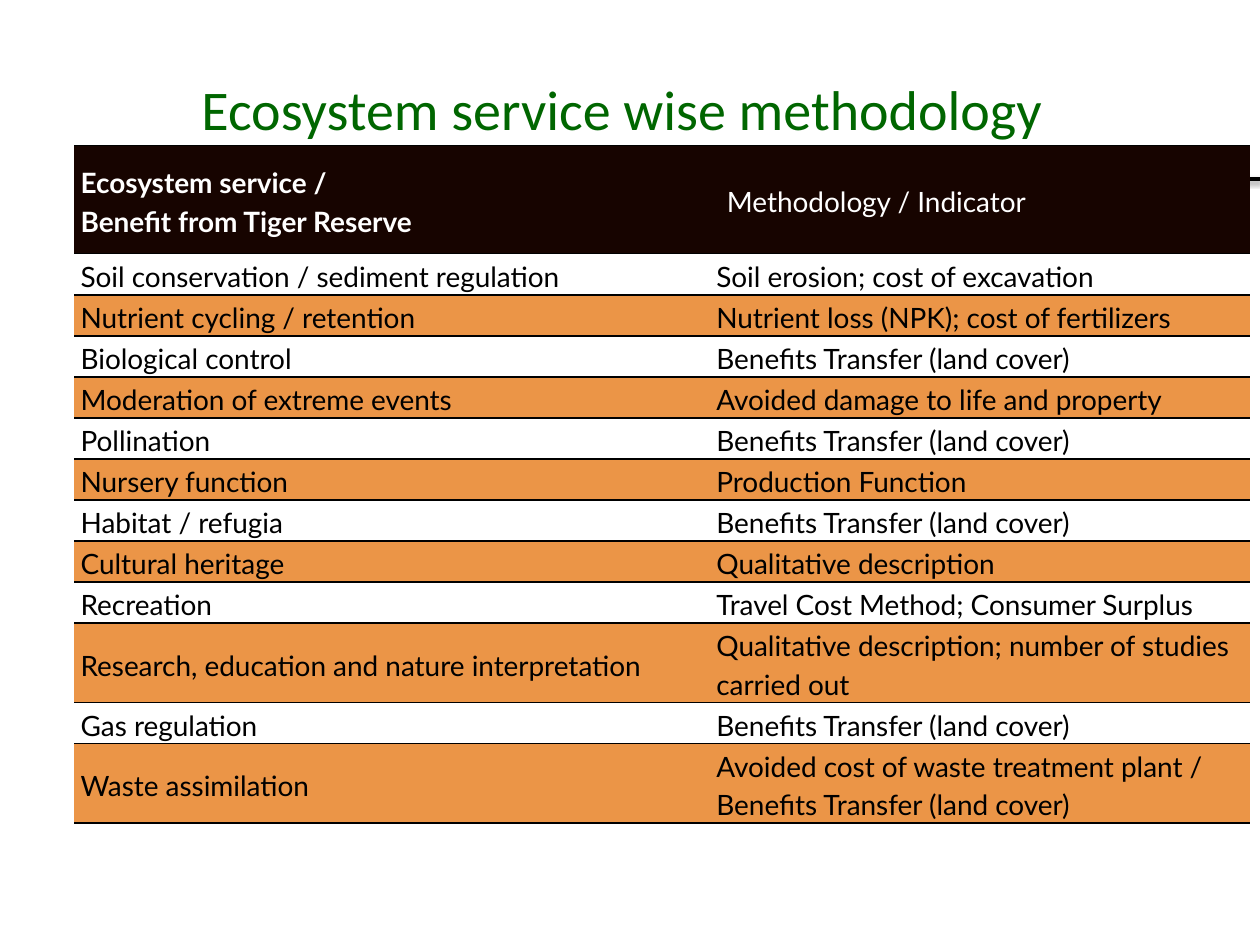
from pptx import Presentation
from pptx.util import Pt
from pptx.dml.color import RGBColor
from pptx.enum.shapes import MSO_CONNECTOR
from pptx.enum.text import MSO_ANCHOR, PP_ALIGN
from pptx.oxml import parse_xml
from pptx.oxml.ns import nsdecls

TITLE = "Ecosystem service wise methodology"
HEADER = ("Ecosystem service /\nBenefit from Tiger Reserve", "Methodology / Indicator")
TRANSFER = "Benefits Transfer (land cover)"
SERVICES = [
    ("Soil conservation / sediment regulation", "Soil erosion; cost of excavation"),
    ("Nutrient cycling / retention", "Nutrient loss (NPK); cost of fertilizers"),
    ("Biological control", TRANSFER),
    ("Moderation of extreme events", "Avoided damage to life and property"),
    ("Pollination", TRANSFER),
    ("Nursery function", "Production Function"),
    ("Habitat / refugia", TRANSFER),
    ("Cultural heritage", "Qualitative description"),
    ("Recreation", "Travel Cost Method; Consumer Surplus"),
    ("Research, education and nature interpretation",
     "Qualitative description; number of studies carried out"),
    ("Gas regulation", TRANSFER),
    ("Waste assimilation", "Avoided cost of waste treatment plant / " + TRANSFER),
]
COLORS = {"title": "006600", "header": "170400", "band": "EB9547",
          "white": "FFFFFF", "black": "000000"}
COL_W = (363.3, 308.5)
HEADER_H, ROW_H, TALL_H = 62, 22.3, 42.5
WRAP_LEN = 45  # longer methods take two lines
CELL = {"margin_left": Pt(3.6), "margin_right": Pt(3.6), "margin_top": Pt(0.7),
        "margin_bottom": Pt(0.7), "vertical_anchor": MSO_ANCHOR.MIDDLE}


def rgb(name):
    return RGBColor.from_string(COLORS[name])


def set_all(obj, values):
    for name, value in values.items():
        setattr(obj, name, value)


def style_font(font, color, **values):
    set_all(font, values)
    font.color.rgb = rgb(color)


def set_borders(cell):
    tcPr = cell._tc.get_or_add_tcPr()
    black = f'<a:solidFill><a:srgbClr val="{COLORS["black"]}"/></a:solidFill>'
    for side, fill in zip("LRTB", ["<a:noFill/>"] * 2 + [black] * 2):
        tcPr.append(parse_xml(f'<a:ln{side} {nsdecls("a")} w="{Pt(1)}">{fill}</a:ln{side}>'))


def fill_cell(cell, text, fill, color, bold, align, indent):
    set_all(cell, CELL)
    set_borders(cell)
    cell.fill.solid()
    cell.fill.fore_color.rgb = rgb(fill)
    cell.text = text
    for p in cell.text_frame.paragraphs:
        set_all(p, {"line_spacing": 1.15, "alignment": align})
        p._p.get_or_add_pPr().set("marL", str(Pt(indent)))
        style_font(p.font, color, name="Lato", size=Pt(16), bold=bold)


prs = Presentation()
prs.slide_width, prs.slide_height = Pt(720), Pt(540)
s = prs.slides.add_slide(prs.slide_layouts[6])

# Rule with soft shadow, behind the table
rule = s.shapes.add_connector(MSO_CONNECTOR.STRAIGHT, Pt(90), Pt(102.2), Pt(720), Pt(102.2))
rule.line.color.rgb = rgb("black")
rule.line.width = Pt(2)
rule._element.spPr.append(parse_xml(
    f'<a:effectLst {nsdecls("a")}><a:outerShdw blurRad="{Pt(3.1)}" dist="{Pt(1.6)}" '
    f'dir="5400000" rotWithShape="0"><a:srgbClr val="{COLORS["black"]}">'
    '<a:alpha val="38000"/></a:srgbClr></a:outerShdw></a:effectLst>'))

# Title
tf = s.shapes.add_textbox(Pt(108), Pt(21.6), Pt(588), Pt(102.2 - 21.6)).text_frame
set_all(tf, {"word_wrap": True, "vertical_anchor": MSO_ANCHOR.MIDDLE})
p = tf.paragraphs[0]
r = p.add_run()
r.text = TITLE
style_font(r.font, "title", name="Calibri", size=Pt(32))

# Table
heights = [HEADER_H] + [TALL_H if len(m) > WRAP_LEN else ROW_H for _, m in SERVICES]
table = s.shapes.add_table(len(heights), len(COL_W), Pt(42.5), Pt(83),
                           Pt(sum(COL_W)), Pt(sum(heights))).table
for col, w in zip(table.columns, COL_W):
    col.width = Pt(w)
for row, h in zip(table.rows, heights):
    row.height = Pt(h)

for j, text in enumerate(HEADER):
    fill_cell(table.cell(0, j), text, "header", "white", j == 0, PP_ALIGN.LEFT, 6 * j)
for i, service in enumerate(SERVICES, 1):
    fill = "white" if i % 2 else "band"
    for j, text in enumerate(service):
        justified = j == 0 and not text.startswith("Research")
        align = PP_ALIGN.JUSTIFY if justified else PP_ALIGN.LEFT
        fill_cell(table.cell(i, j), text, fill, "black", False, align, 0)

prs.save("out.pptx")
